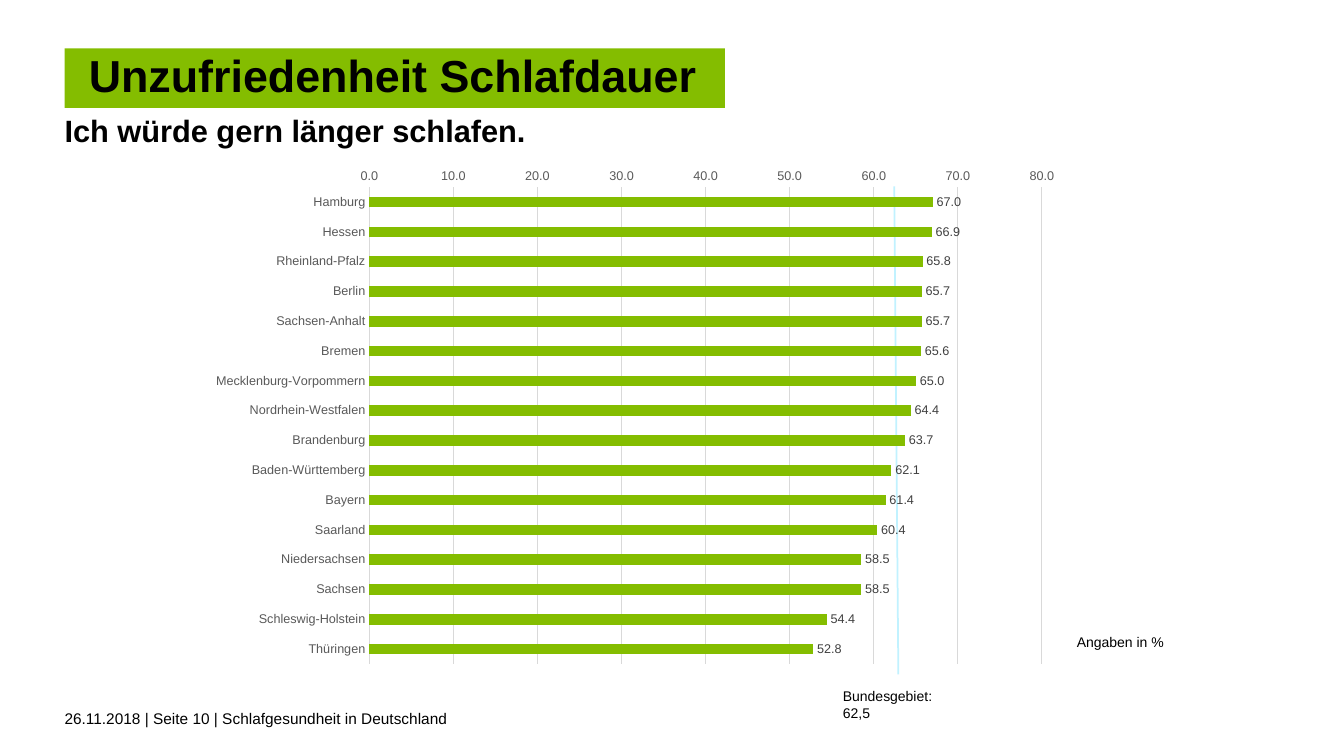
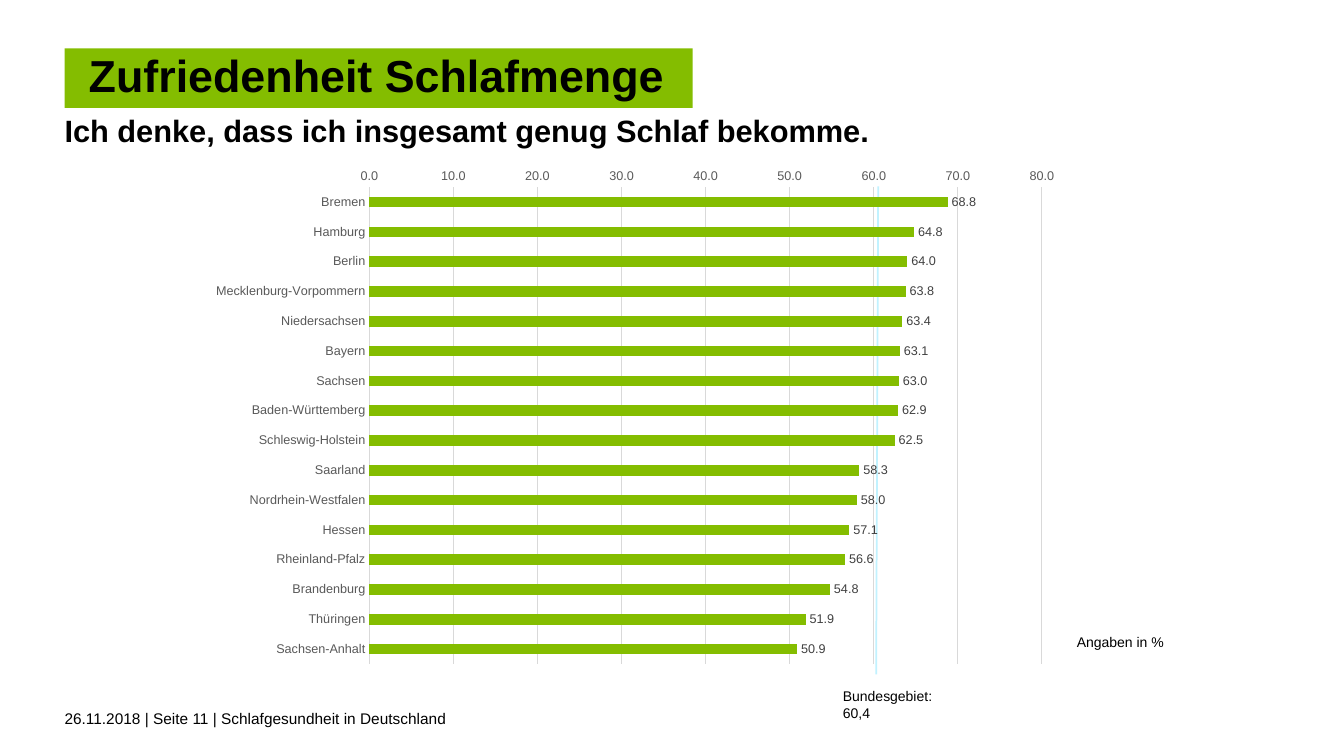
import pptx
import pptx.chart.data
import pptx.dml.color
import pptx.enum.chart
import pptx.enum.shapes
import pptx.enum.text
import pptx.oxml.ns
import pptx.util
from lxml import etree

Inches = pptx.util.Inches
Pt = pptx.util.Pt

FONT = "Arial"
COLORS = {
    "green": "84BD00",
    "black": "000000",
    "axis text": "595959",
    "label text": "404040",
    "grid": "D9D9D9",
    "average": "C1F2FF",
}
COLORS = {name: pptx.dml.color.RGBColor.from_string(value) for name, value in COLORS.items()}

SURVEYS = [
    {
        "title": "Unzufriedenheit Schlafdauer",
        "title width": 6.55,
        "statement": "Ich würde gern länger schlafen.",
        "page": 10,
        "average": "62,5",
        "average line": (8.87, 8.91),
        "states": [
            ("Hamburg", 67.0), ("Hessen", 66.9), ("Rheinland-Pfalz", 65.8), ("Berlin", 65.7),
            ("Sachsen-Anhalt", 65.7), ("Bremen", 65.6), ("Mecklenburg-Vorpommern", 65.0),
            ("Nordrhein-Westfalen", 64.4), ("Brandenburg", 63.7), ("Baden-Württemberg", 62.1),
            ("Bayern", 61.4), ("Saarland", 60.4), ("Niedersachsen", 58.5), ("Sachsen", 58.5),
            ("Schleswig-Holstein", 54.4), ("Thüringen", 52.8),
        ],
    },
    {
        "title": "Zufriedenheit Schlafmenge",
        "title width": 6.23,
        "statement": "Ich denke, dass ich insgesamt genug Schlaf bekomme.",
        "page": 11,
        "average": "60,4",
        "average line": (8.71, 8.69),
        "states": [
            ("Bremen", 68.8), ("Hamburg", 64.8), ("Berlin", 64.0), ("Mecklenburg-Vorpommern", 63.8),
            ("Niedersachsen", 63.4), ("Bayern", 63.1), ("Sachsen", 63.0), ("Baden-Württemberg", 62.9),
            ("Schleswig-Holstein", 62.5), ("Saarland", 58.3), ("Nordrhein-Westfalen", 58.0),
            ("Hessen", 57.1), ("Rheinland-Pfalz", 56.6), ("Brandenburg", 54.8), ("Thüringen", 51.9),
            ("Sachsen-Anhalt", 50.9),
        ],
    },
]


def set_font(font, size, color, bold=False):
    font.name = FONT
    font.size = Pt(size)
    font.bold = bold
    font.color.rgb = COLORS[color]


def write(shape, text, size, left=0.0, right=0.1, bold=False, wrap=True):
    """Put one left-aligned paragraph in the shape and return it."""
    frame = shape.text_frame
    frame.text = text
    frame.word_wrap = wrap
    frame.vertical_anchor = pptx.enum.text.MSO_ANCHOR.TOP
    frame.margin_left, frame.margin_right = Inches(left), Inches(right)
    frame.margin_top = frame.margin_bottom = Inches(0.05)
    paragraph = frame.paragraphs[0]
    paragraph.alignment = pptx.enum.text.PP_ALIGN.LEFT
    set_font(paragraph.runs[0].font, size, "black", bold)
    return paragraph


presentation = pptx.Presentation()
presentation.slide_width = Inches(13.33)
presentation.slide_height = Inches(7.5)

for survey in SURVEYS:
    slide = presentation.slides.add_slide(presentation.slide_layouts[6])
    shapes = slide.shapes

    footer = shapes.add_textbox(Inches(0.64), Inches(6.99), Inches(8), Inches(0.4))
    write(footer, f"26.11.2018 | Seite {survey['page']} | Schlafgesundheit in Deutschland", 11)

    line_top, line_bottom = survey["average line"]
    average_line = shapes.add_connector(
        pptx.enum.shapes.MSO_CONNECTOR.STRAIGHT,
        Inches(line_top), Inches(1.85), Inches(line_bottom), Inches(6.69))
    average_line.line.color.rgb = COLORS["average"]
    average_line.line.width = Pt(1.25)
    etree.SubElement(average_line._element.spPr, pptx.oxml.ns.qn("a:effectLst"))

    title = shapes.add_shape(
        pptx.enum.shapes.MSO_SHAPE.RECTANGLE,
        Inches(0.64), Inches(0.48), Inches(survey["title width"]), Inches(0.59))
    title.shadow.inherit = False
    title.fill.solid()
    title.fill.fore_color.rgb = COLORS["green"]
    title.line.fill.background()
    write(title, survey["title"], 32, 0.24, 0.24, bold=True, wrap=False).line_spacing = 0.9
    title.text_frame.vertical_anchor = pptx.enum.text.MSO_ANCHOR.MIDDLE

    statement = shapes.add_textbox(Inches(0.64), Inches(1.13), Inches(12.05), Inches(0.3))
    write(statement, survey["statement"], 22, bold=True).line_spacing = Pt(21.6)

    unit = shapes.add_textbox(Inches(10.44), Inches(6.24), Inches(1.83), Inches(0.27))
    write(unit, "Angaben in %", 10, 0.24, 0.24)

    states, shares = zip(*survey["states"])
    chart_data = pptx.chart.data.CategoryChartData(number_format="0.0")
    chart_data.categories = states
    chart_data.add_series("Series 1", shares)
    chart = shapes.add_chart(
        pptx.enum.chart.XL_CHART_TYPE.BAR_CLUSTERED,
        Inches(1.97), Inches(1.57), Inches(8.66), Inches(5.12), chart_data).chart
    chart.has_title = False
    chart.has_legend = False
    set_font(chart.font, 10, "black")

    for axis in (chart.category_axis, chart.value_axis):
        axis.major_tick_mark = axis.minor_tick_mark = pptx.enum.chart.XL_TICK_MARK.NONE
        set_font(axis.tick_labels.font, 9, "axis text")

    state_axis = chart.category_axis
    state_axis.reverse_order = True
    share_axis = chart.value_axis
    share_axis.minimum_scale, share_axis.maximum_scale, share_axis.major_unit = 0, 80, 10
    share_axis.tick_labels.number_format = "0.0"
    share_axis.tick_labels.number_format_is_linked = False
    share_axis.format.line.fill.background()
    share_axis.has_major_gridlines = True
    for line in (state_axis.format.line, share_axis.major_gridlines.format.line):
        line.color.rgb = COLORS["grid"]
        line.width = Pt(0.75)

    plot = chart.plots[0]
    plot.gap_width = 182
    plot.vary_by_categories = False
    bars = plot.series[0]
    bars.format.fill.solid()
    bars.format.fill.fore_color.rgb = COLORS["green"]
    labels = bars.data_labels
    labels.show_value = True
    labels.number_format = "0.0"
    labels.number_format_is_linked = False
    labels.position = pptx.enum.chart.XL_LABEL_POSITION.OUTSIDE_END
    set_font(labels.font, 9, "label text")

    average = shapes.add_textbox(Inches(8.12), Inches(6.77), Inches(1.66), Inches(0.27))
    write(average, f"Bundesgebiet: {survey['average']}", 10, 0.24, 0.24)

presentation.save("out.pptx")
